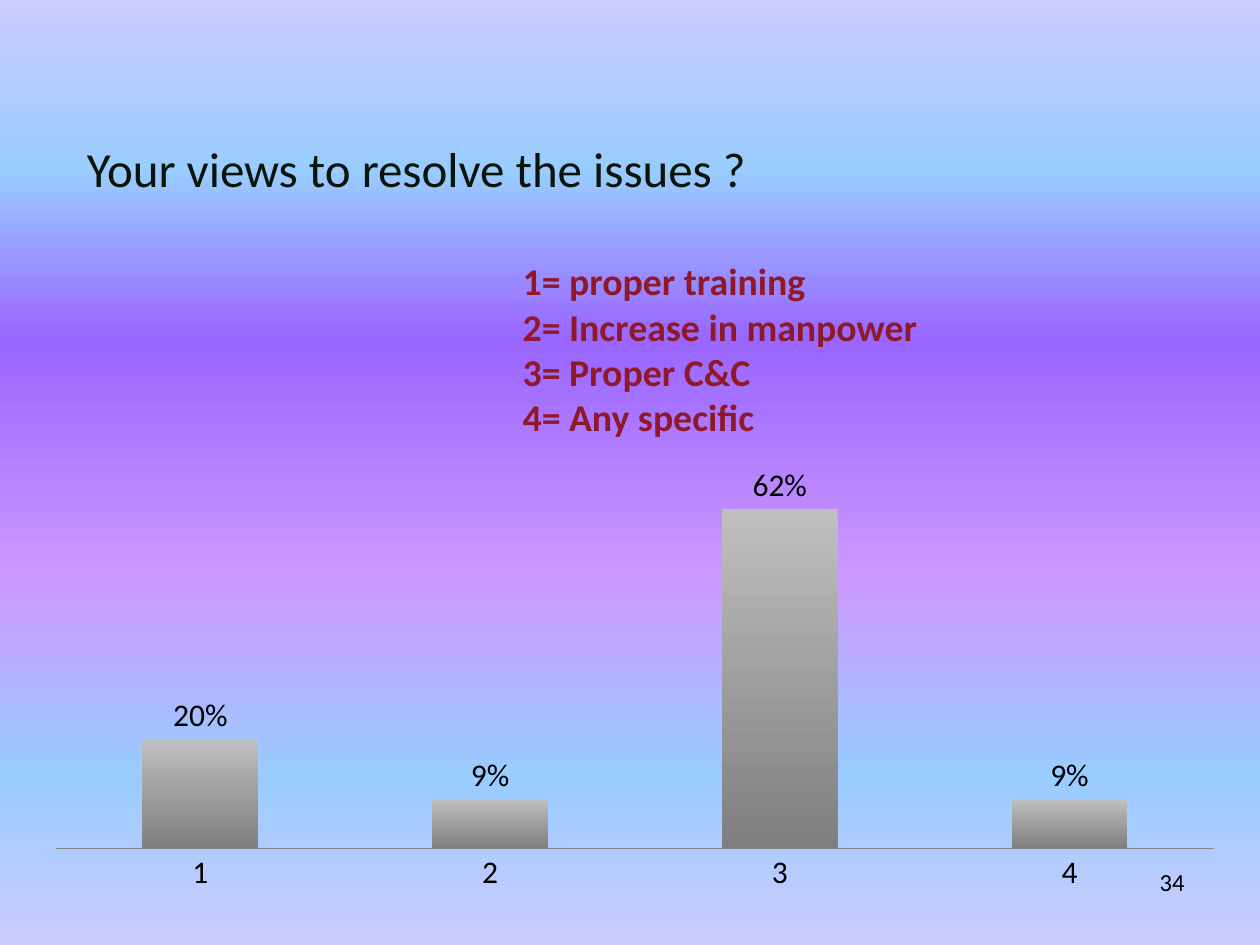
import lxml.etree
import pptx
import pptx.chart.data
import pptx.dml.color
import pptx.enum.chart
import pptx.enum.text
import pptx.oxml
import pptx.oxml.ns
import pptx.util

Inches = pptx.util.Inches
Pt = pptx.util.Pt
RGBColor = pptx.dml.color.RGBColor
qn = pptx.oxml.ns.qn

FONT = "Calibri"
BLACK = RGBColor(0x00, 0x00, 0x00)
DARK_GREEN = RGBColor(0x09, 0x14, 0x0A)
DARK_RED = RGBColor(0x90, 0x19, 0x29)
AXIS_GRAY = RGBColor(0x86, 0x86, 0x86)
LAVENDER = RGBColor(0xCC, 0xCC, 0xFF)
SKY = RGBColor(0x99, 0xCC, 0xFF)
VIOLET = RGBColor(0x99, 0x66, 0xFF)
ORCHID = RGBColor(0xCC, 0x99, 0xFF)
BAR_TOP = RGBColor(0xBF, 0xBF, 0xBF)
BAR_BOTTOM = RGBColor(0x7F, 0x7F, 0x7F)


def set_gradient(fill, owner, stops):
    """Fill downwards with (percent, colour) stops; owner is the XML element holding the fill."""
    fill.gradient()
    fill.gradient_angle = 270
    stop_list = next(owner.iter(qn("a:gsLst")))
    for stop in list(stop_list):
        stop_list.remove(stop)
    for percent, color in stops:
        stop = lxml.etree.SubElement(stop_list, qn("a:gs"), pos=str(percent * 1000))
        lxml.etree.SubElement(stop, qn("a:srgbClr"), val=str(color))


def add_text(page, place, lines, size, color, bold=False):
    box = page.shapes.add_textbox(*[Inches(length) for length in place])
    frame = box.text_frame
    frame.word_wrap = True
    frame.text = "\n".join(lines)
    for para in frame.paragraphs:
        para.font.name = FONT
        para.font.size = Pt(size)
        para.font.bold = bold
        para.font.color.rgb = color
    return frame


deck = pptx.Presentation()
deck.slide_width = Inches(10)
deck.slide_height = Inches(7.5)
page = deck.slides.add_slide(deck.slide_layouts[6])
set_gradient(page.background.fill, page.element, [
    (0, LAVENDER), (18, SKY), (36, VIOLET), (61, ORCHID), (82, SKY), (100, LAVENDER)])

title = add_text(page, (0.5, 0.83, 6.92, 1), ["Your views to resolve the issues ?"], 28, DARK_GREEN)
title.margin_left = Inches(0.19)
title.vertical_anchor = pptx.enum.text.MSO_ANCHOR.MIDDLE

# Column chart
data = pptx.chart.data.CategoryChartData(number_format="0%")
data.categories = ["1", "2", "3", "4"]
data.add_series("Series 1", [0.2, 0.09, 0.62, 0.09])
chart = page.shapes.add_chart(
    pptx.enum.chart.XL_CHART_TYPE.COLUMN_CLUSTERED,
    Inches(0.25), Inches(1.83), Inches(9.58), Inches(5.33), data).chart
chart.has_title = False
chart.has_legend = False
chart.font.name = FONT
chart.font.size = Pt(18)
chart.font.color.rgb = BLACK

category_axis = chart.category_axis
category_axis.major_tick_mark = pptx.enum.chart.XL_TICK_MARK.NONE
category_axis.format.line.color.rgb = AXIS_GRAY
value_axis = chart.value_axis
value_axis.minimum_scale = 0
value_axis.maximum_scale = 0.7
value_axis.has_major_gridlines = False
value_axis.visible = False

plot = chart.plots[0]
plot.gap_width = 150
plot.vary_by_categories = False
plot.has_data_labels = True
labels = plot.data_labels
labels.show_value = True
labels.number_format = "0%"
labels.number_format_is_linked = False
labels.position = pptx.enum.chart.XL_LABEL_POSITION.OUTSIDE_END
bars = plot.series[0]
set_gradient(bars.format.fill, bars._element, [(0, BAR_TOP), (100, BAR_BOTTOM)])

# Fixed plot area, as fractions of the chart, leaving room for the key above
plot_area = next(chart.element.iter(qn("c:plotArea")))
for old_layout in plot_area.findall(qn("c:layout")):
    plot_area.remove(old_layout)
layout = lxml.etree.Element(qn("c:layout"))
manual = lxml.etree.SubElement(layout, qn("c:manualLayout"))
for tag, value in [("layoutTarget", "inner"), ("xMode", "edge"), ("yMode", "edge"),
                   ("x", "0.02"), ("y", "0.35"), ("w", "0.96"), ("h", "0.57")]:
    lxml.etree.SubElement(manual, qn("c:" + tag), val=value)
plot_area.insert(0, layout)

add_text(page, (4.05, 2, 3.6, 1.6),
         ["1= proper training", "2= Increase in manpower", "3= Proper C&C", "4= Any specific"],
         21.6, DARK_RED, bold=True)

number = add_text(page, (7.17, 6.83, 2.33, 0.52), ["34"], 14, BLACK)
number.paragraphs[0].alignment = pptx.enum.text.PP_ALIGN.RIGHT

deck.save("out.pptx")
